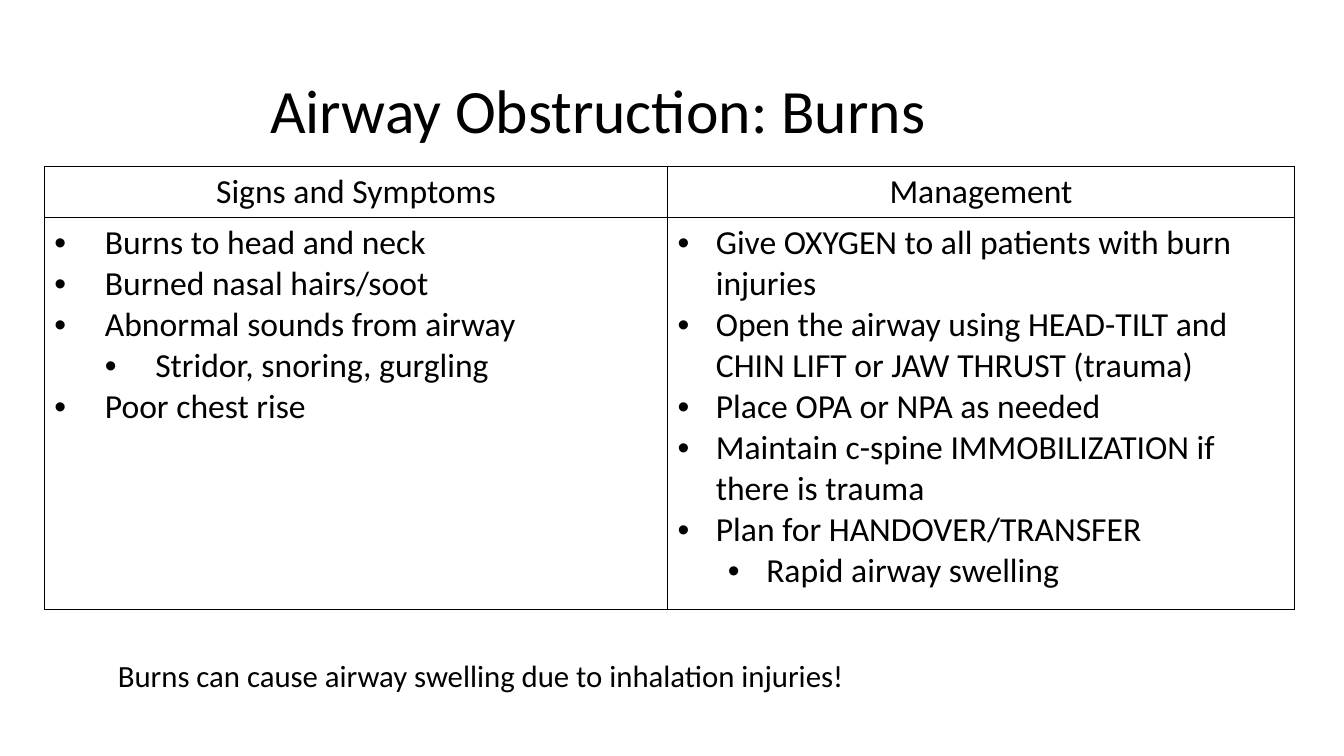
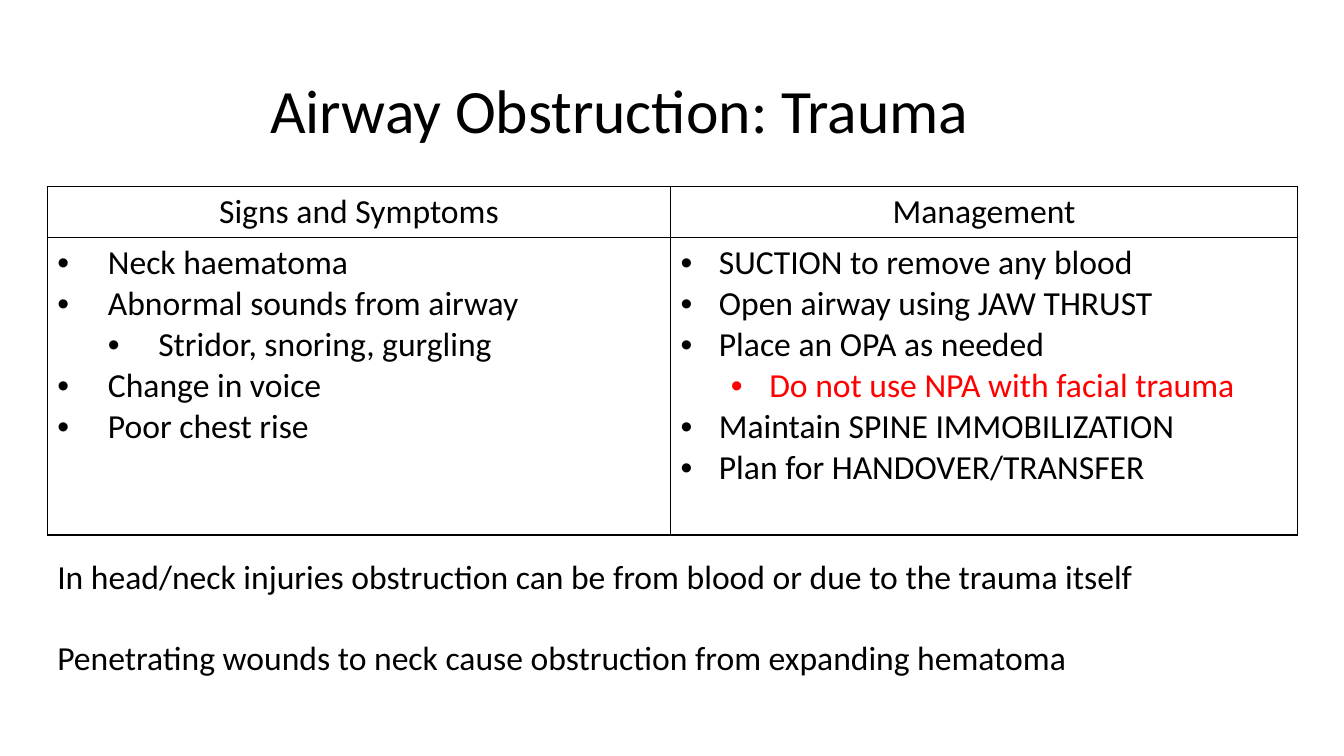
from lxml import etree
from pptx import Presentation
from pptx.dml.color import RGBColor
from pptx.enum.text import MSO_ANCHOR, MSO_AUTO_SIZE, PP_ALIGN
from pptx.oxml.ns import qn
from pptx.util import Inches, Pt

LEFT, CENTER = PP_ALIGN.LEFT, PP_ALIGN.CENTER
MIDDLE = MSO_ANCHOR.MIDDLE
FIT_SHAPE = MSO_AUTO_SIZE.SHAPE_TO_FIT_TEXT
TITLE_ONLY = 5
FONT = "Calibri"
COLORS = {"text": "000000", "warning": "FF0000", "border": "000000"}
HEADINGS = ("Signs and Symptoms", "Management")
COLUMN_WIDTHS = (6.18, 6.22)
BULLET_INDENTS = (0.5, 0.38)
LEVEL_STEP = 0.5
HEADER_HEIGHT = 0.5

SLIDES = [
    {
        "title": "Airway Obstruction: Burns",
        "title_box": (2.58, 0.4, 9.83, 1.45),
        "table_box": (0.44, 1.65, 12.4, 4.39),
        "lists": (
            [
                ("Burns to head and neck", 0),
                ("Burned nasal hairs/soot", 0),
                ("Abnormal sounds from airway", 0),
                ("Stridor, snoring, gurgling", 1),
                ("Poor chest rise", 0),
            ],
            [
                ("Give OXYGEN to all patients with burn injuries", 0),
                ("Open the airway using HEAD-TILT and CHIN LIFT or JAW THRUST (trauma)", 0),
                ("Place OPA or NPA as needed", 0),
                ("Maintain c-spine IMMOBILIZATION if there is trauma", 0),
                ("Plan for HANDOVER/TRANSFER", 0),
                ("Rapid airway swelling", 1),
            ],
        ),
        "note_box": (1.07, 6.47, 7.65, 0.47),
        "notes": ["Burns can cause airway swelling due to inhalation injuries!"],
        "note_format": {"size": 22, "wrap": False},
    },
    {
        "title": "Airway Obstruction: Trauma",
        "title_box": (2.58, 0.4, 10.13, 1.45),
        "table_box": (0.47, 1.85, 12.4, 3.45),
        "lists": (
            [
                ("Neck haematoma", 0),
                ("Abnormal sounds from airway", 0),
                ("Stridor, snoring, gurgling", 1),
                ("Change in voice", 0),
                ("Poor chest rise", 0),
            ],
            [
                ("SUCTION to remove any blood", 0),
                ("Open airway using JAW THRUST", 0),
                ("Place an OPA as needed", 0),
                ("Do not use NPA with facial trauma", 1, "warning"),
                ("Maintain SPINE IMMOBILIZATION", 0),
                ("Plan for HANDOVER/TRANSFER", 0),
            ],
        ),
        "note_box": (0.47, 5.47, 12.96, 1.31),
        "notes": [
            "In head/neck injuries obstruction can be from blood or due to the trauma itself",
            "Penetrating wounds to neck cause obstruction from expanding hematoma",
        ],
        "note_format": {"size": 24, "wrap": True},
    },
]


def add_bullet(paragraph, indent, level):
    paragraph.level = level
    properties = paragraph._p.get_or_add_pPr()
    properties.set("marL", str(Inches(indent + level * LEVEL_STEP)))
    properties.set("indent", str(-Inches(indent)))
    etree.SubElement(properties, qn("a:buFont"), typeface="Arial")
    etree.SubElement(properties, qn("a:buChar"), char="•")


def write_text(frame, text, first=True, size=24, color="text", align=LEFT,
               indent=None, level=0, space_before=None, line_spacing=None):
    paragraph = frame.paragraphs[0] if first else frame.add_paragraph()
    paragraph.alignment = align
    if line_spacing:
        paragraph.line_spacing = line_spacing
    if space_before and not first:
        paragraph.space_before = Pt(space_before)
    if indent is not None:
        add_bullet(paragraph, indent, level)
    run = paragraph.add_run()
    run.text = text
    run.font.name = FONT
    run.font.size = Pt(size)
    run.font.color.rgb = RGBColor.from_string(COLORS[color])


def outline_cell(cell):
    cell.fill.background()
    properties = cell._tc.get_or_add_tcPr()
    for position, side in enumerate(("lnL", "lnR", "lnT", "lnB")):
        line = etree.Element(qn(f"a:{side}"), w=str(Pt(1)))
        fill = etree.SubElement(line, qn("a:solidFill"))
        etree.SubElement(fill, qn("a:srgbClr"), val=COLORS["border"])
        properties.insert(position, line)


def place_title(slide, box, text):
    title = slide.shapes.title
    title.left, title.top, title.width, title.height = map(Inches, box)
    title.text_frame.vertical_anchor = MIDDLE
    write_text(title.text_frame, text, size=44, line_spacing=0.9)


def place_table(slide, box, lists):
    table = slide.shapes.add_table(2, len(HEADINGS), *map(Inches, box)).table
    table.first_row = False
    table.horz_banding = False
    table.rows[0].height = Inches(HEADER_HEIGHT)
    table.rows[1].height = Inches(box[3] - HEADER_HEIGHT)
    for column, (heading, items) in enumerate(zip(HEADINGS, lists)):
        table.columns[column].width = Inches(COLUMN_WIDTHS[column])
        header, body = table.cell(0, column), table.cell(1, column)
        outline_cell(header)
        outline_cell(body)
        write_text(header.text_frame, heading, align=CENTER)
        for index, (text, level, *color) in enumerate(items):
            write_text(body.text_frame, text, first=index == 0, level=level,
                       indent=BULLET_INDENTS[column],
                       color=color[0] if color else "text")


def place_notes(slide, box, notes, size, wrap):
    frame = slide.shapes.add_textbox(*map(Inches, box)).text_frame
    frame.word_wrap = wrap
    frame.auto_size = FIT_SHAPE
    for index, note in enumerate(notes):
        write_text(frame, note, first=index == 0, size=size, space_before=29)


def build_slide(presentation, content):
    slide = presentation.slides.add_slide(presentation.slide_layouts[TITLE_ONLY])
    place_title(slide, content["title_box"], content["title"])
    place_table(slide, content["table_box"], content["lists"])
    place_notes(slide, content["note_box"], content["notes"], **content["note_format"])


def main():
    presentation = Presentation()
    presentation.slide_width = Inches(13.33)
    presentation.slide_height = Inches(7.5)
    for content in SLIDES:
        build_slide(presentation, content)
    presentation.save("out.pptx")


if __name__ == "__main__":
    main()
